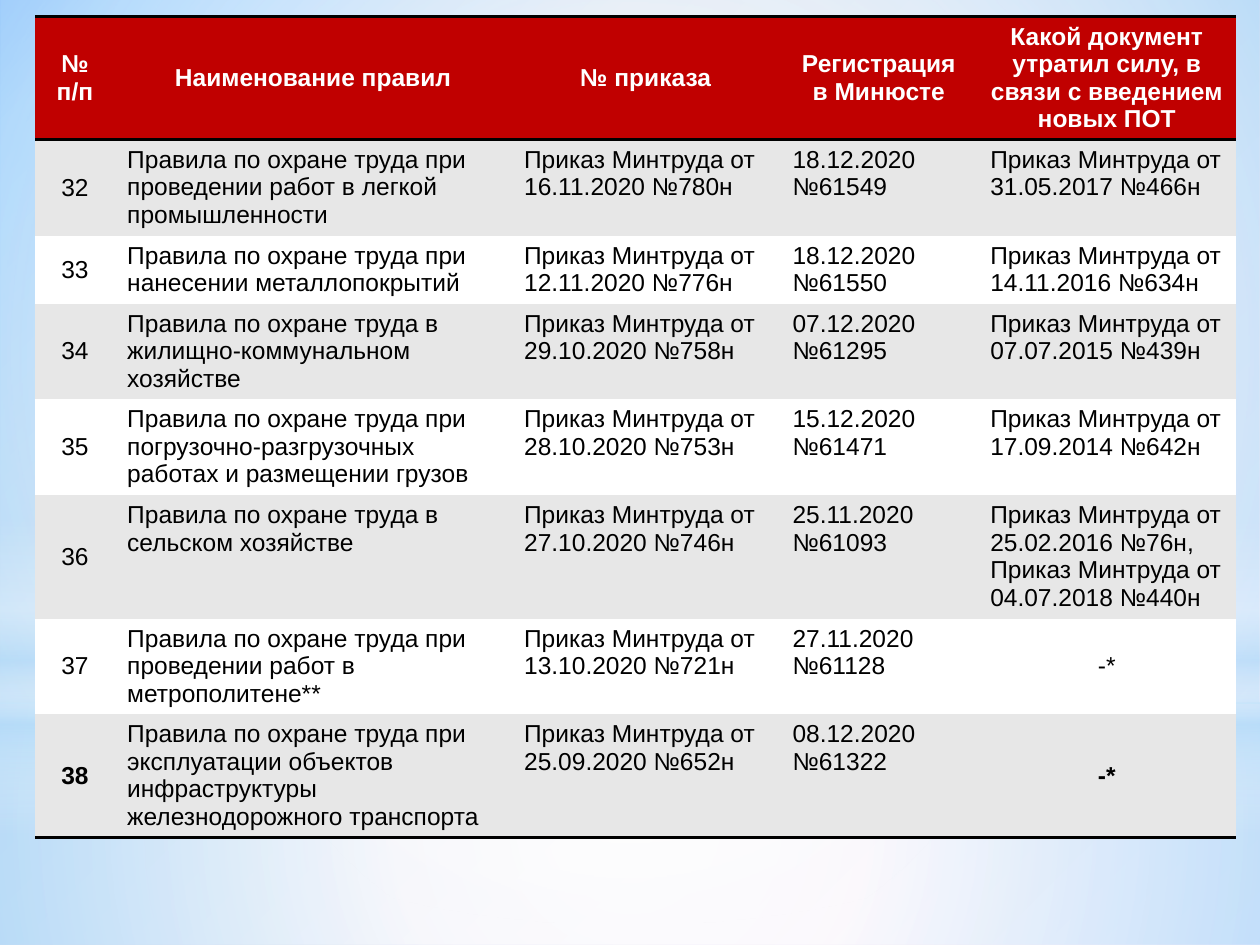
from lxml.etree import SubElement
from pptx import Presentation
from pptx.dml.color import RGBColor
from pptx.enum.shapes import MSO_SHAPE as Shape
from pptx.enum.text import MSO_ANCHOR as Anchor, PP_ALIGN as Align
from pptx.oxml.ns import qn
from pptx.util import Inches, Pt

THEME = {
    "font": "Arial", "size": 14, "border": 2,
    "header": "C00000", "header_text": "FFFFFF", "text": "000000",
    "bands": ("E7E7E7", "FFFFFF"),
    "white": "FFFFFF", "sky": "B4DCFA",
}
WHITE, SKY = THEME["white"], THEME["sky"]
NO_STYLE = "{2D5ABB26-0587-4C30-8999-92F81FD0307C}"

# Gradient stops: position %, colour, opacity %
BACKGROUND = [(0, "5E9EFF", 100), (6, "85C2FF", 100), (29, "C4D6EB", 100), (100, "FFEBFA", 100)]
# Backdrop: shape, box, stops, angle (None = radial)
BACKDROP = [
    (Shape.RECTANGLE, (0, 5.58, 10, 1.92),
     [(0, WHITE, 91), (37, WHITE, 76), (100, SKY, 79)], None),
    (Shape.RECTANGLE, (0, 0, 10, 5.58),
     [(0, WHITE, 89), (48, WHITE, 62), (100, SKY, 79)], None),
    (Shape.RECTANGLE, (0, 4.12, 10, 2.5),
     [(0, WHITE, 0), (29, WHITE, 30), (45, SKY, 40), (55, WHITE, 26),
      (65, SKY, 60), (100, WHITE, 0)], 90),
    (Shape.OVAL, (0, 1.75, 10, 5.58), [(0, WHITE, 100), (56, WHITE, 0)], None),
]

HEADER = ("№ п/п", "Наименование правил", "№ приказа", "Регистрация в Минюсте",
          "Какой документ утратил силу, в связи с введением новых ПОТ")
# Number, rules on labour protection, order, registration, replaced orders
RULES = [
    (32, "при проведении работ в легкой промышленности",
     "16.11.2020 №780н", "18.12.2020 №61549", ["31.05.2017 №466н"]),
    (33, "при нанесении металлопокрытий",
     "12.11.2020 №776н", "18.12.2020 №61550", ["14.11.2016 №634н"]),
    (34, "в жилищно-коммунальном хозяйстве",
     "29.10.2020 №758н", "07.12.2020 №61295", ["07.07.2015 №439н"]),
    (35, "при погрузочно-разгрузочных работах и размещении грузов",
     "28.10.2020 №753н", "15.12.2020 №61471", ["17.09.2014 №642н"]),
    (36, "в сельском хозяйстве",
     "27.10.2020 №746н", "25.11.2020 №61093", ["25.02.2016 №76н", "04.07.2018 №440н"]),
    (37, "при проведении работ в метрополитене**",
     "13.10.2020 №721н", "27.11.2020 №61128", []),
    (38, "при эксплуатации объектов инфраструктуры железнодорожного транспорта",
     "25.09.2020 №652н", "08.12.2020 №61322", []),
]
NOTHING_REPLACED = "-*"
COLUMN_WIDTHS = (0.63, 3.15, 2.13, 1.57, 2.05)
ROW_LINES = (4, 3, 2, 3, 3, 4, 3, 4)
LINE_HEIGHT, CELL_PADDING = 0.22, 0.1
TABLE_LEFT, TABLE_TOP = 0.28, 0.13


def order(date_and_number):
    return f"Приказ Минтруда от {date_and_number}"


def table_row(number, subject, new_order, registration, replaced):
    return (str(number), f"Правила по охране труда {subject}", order(new_order), registration,
            ", ".join(map(order, replaced)) or NOTHING_REPLACED)


def add_color(parent, color, opacity=100):
    element = SubElement(parent, qn("a:srgbClr"), val=color)
    if opacity < 100:
        SubElement(element, qn("a:alpha"), val=str(opacity * 1000))


def set_gradient(properties, stops, angle):
    """Swap the solid fill in the properties for a gradient."""
    solid = properties.find(qn("a:solidFill"))
    gradient = SubElement(properties, qn("a:gradFill"), rotWithShape="1")
    stop_list = SubElement(gradient, qn("a:gsLst"))
    for position, color, opacity in stops:
        add_color(SubElement(stop_list, qn("a:gs"), pos=str(position * 1000)), color, opacity)
    if angle is None:
        radial = SubElement(gradient, qn("a:path"), path="circle")
        SubElement(radial, qn("a:fillToRect"), dict.fromkeys("ltrb", "50000"))
    else:
        SubElement(gradient, qn("a:lin"), ang=str(angle * 60000), scaled="0")
    properties.replace(solid, gradient)


def add_border(cell, side):
    line = SubElement(cell._tc.get_or_add_tcPr(), qn(f"a:ln{side}"), w=str(Pt(THEME["border"])))
    add_color(SubElement(line, qn("a:solidFill")), THEME["text"])


def fill_cell(cell, text, fill, color, centred, bold, borders):
    for side in borders:
        add_border(cell, side)
    cell.fill.solid()
    cell.fill.fore_color.rgb = RGBColor.from_string(fill)
    cell.text = text
    cell.vertical_anchor = Anchor.MIDDLE if centred else Anchor.TOP
    paragraph = cell.text_frame.paragraphs[0]
    paragraph.alignment = Align.CENTER if centred else Align.LEFT
    font = paragraph.font
    font.name, font.size, font.bold = THEME["font"], Pt(THEME["size"]), bold
    font.color.rgb = RGBColor.from_string(color)


def add_backdrop(slide):
    slide.background.fill.solid()
    set_gradient(slide._element.find(f".//{qn('p:bgPr')}"), BACKGROUND, 45)
    for kind, box, stops, angle in BACKDROP:
        shape = slide.shapes.add_shape(kind, *map(Inches, box))
        shape.shadow.inherit = False
        shape.fill.solid()
        shape.line.fill.background()
        set_gradient(shape._element.spPr, stops, angle)


def add_rules_table(slide):
    rows = [HEADER] + [table_row(*rule) for rule in RULES]
    heights = [lines * LINE_HEIGHT + CELL_PADDING for lines in ROW_LINES]
    table = slide.shapes.add_table(
        len(rows), len(HEADER), Inches(TABLE_LEFT), Inches(TABLE_TOP),
        Inches(sum(COLUMN_WIDTHS)), Inches(sum(heights))).table
    table._tbl.tblPr.find(qn("a:tableStyleId")).text = NO_STYLE
    for column, width in zip(table.columns, COLUMN_WIDTHS):
        column.width = Inches(width)
    for row, height in zip(table.rows, heights):
        row.height = Inches(height)

    last = len(rows) - 1
    for i, texts in enumerate(rows):
        header = i == 0
        fill = THEME["header"] if header else THEME["bands"][(i - 1) % 2]
        color = THEME["header_text" if header else "text"]
        borders = "TB" if header else "B" if i == last else ""
        for j, text in enumerate(texts):
            centred = header or j == 0 or text == NOTHING_REPLACED
            bold = centred and i in (0, last)
            fill_cell(table.cell(i, j), text, fill, color, centred, bold, borders)


def main():
    presentation = Presentation()
    presentation.slide_width, presentation.slide_height = Inches(10), Inches(7.5)
    slide = presentation.slides.add_slide(presentation.slide_layouts[6])
    add_backdrop(slide)
    add_rules_table(slide)
    presentation.save("out.pptx")


if __name__ == "__main__":
    main()
